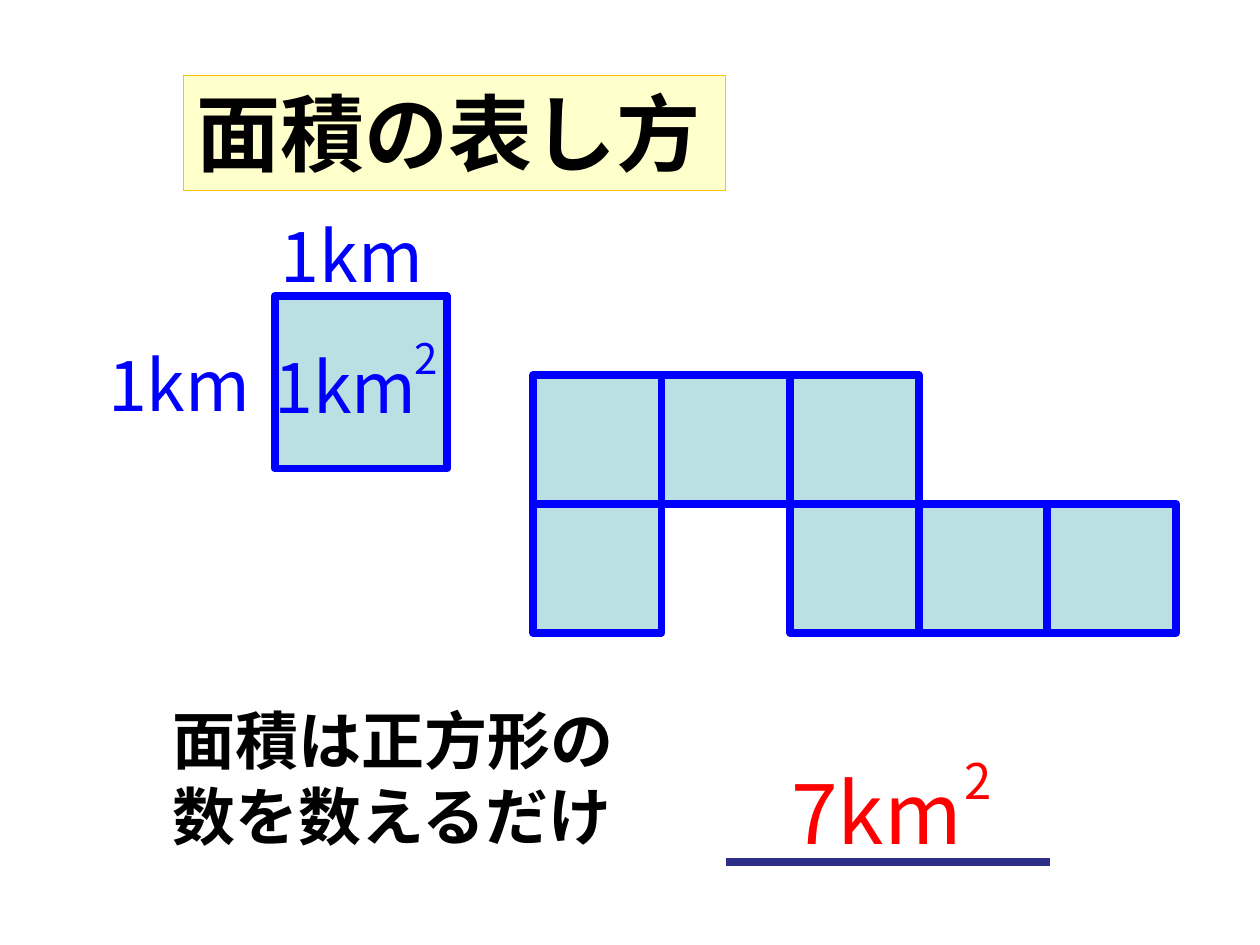
from lxml import etree
from pptx import Presentation
from pptx.dml.color import RGBColor
from pptx.enum import shapes, text
from pptx.oxml import ns
from pptx.util import Pt

FONT = "Noto Sans CJK JP"
HUES = {
    "tile": "BBE0E3",
    "blue": "0000FF",
    "red": "FF0000",
    "ink": "000000",
    "cream": "FFFFCC",
    "gold": "FFC000",
    "navy": "2D2D8A",
}
SIDE = 73.5  # side of one counted square
GRID = (304.5, 214.5)
CELLS = [(0, 0), (1, 0), (2, 0), (0, 1), (2, 1), (3, 1), (4, 1)]


def hue(name):
    return RGBColor.from_string(HUES[name])


def write(shape, words, size, tint, bold=False):
    frame = shape.text_frame
    frame.word_wrap = True
    frame.vertical_anchor = text.MSO_ANCHOR.TOP
    frame.text = words
    para = frame.paragraphs[0]
    para.alignment = text.PP_ALIGN.LEFT
    font = para.runs[0].font
    font.name, font.size, font.bold = FONT, Pt(size), bold
    font.color.rgb = hue(tint)
    # East Asian letters take their own font entry
    east = etree.SubElement(font._element, ns.qn("a:ea"))
    east.set("typeface", FONT)


def label(slide, box, words, size, tint, bold=False):
    shape = slide.shapes.add_textbox(*map(Pt, box))
    write(shape, words, size, tint, bold)


def rect(slide, box, fill, edge, width):
    shape = slide.shapes.add_shape(shapes.MSO_SHAPE.RECTANGLE, *map(Pt, box))
    shape.shadow.inherit = False
    shape.fill.solid()
    shape.fill.fore_color.rgb = hue(fill)
    shape.line.color.rgb = hue(edge)
    shape.line.width = Pt(width)
    return shape


def tile(slide, left, top, side):
    rect(slide, (left, top, side, side), "tile", "blue", 4.5)


def rule(slide, left, right, top):
    line = slide.shapes.add_connector(
        shapes.MSO_CONNECTOR.STRAIGHT, Pt(left), Pt(top), Pt(right), Pt(top))
    line.line.color.rgb = hue("navy")
    line.line.width = Pt(4.5)
    etree.SubElement(line._element.spPr, ns.qn("a:effectLst"))


def main():
    deck = Presentation()
    deck.slide_width, deck.slide_height = Pt(720), Pt(540)
    slide = deck.slides.add_slide(deck.slide_layouts[6])

    # Title
    title = rect(slide, (105, 43.2, 309.6, 65.5), "cream", "gold", 0.75)
    write(title, "面積の表し方", 48, "ink", True)

    # Unit square with its sides and area
    tile(slide, 157, 169.2, 98.6)
    label(slide, (54.7, 191.5, 106.6, 55.4), "1km", 40, "blue")
    label(slide, (153.4, 118.1, 106.6, 55.4), "1km", 40, "blue")
    label(slide, (149.8, 193, 108.7, 55.4), "1km", 40, "blue")
    label(slide, (229.7, 186.5, 42.5, 36), "2", 24, "blue")

    # Squares to count
    for col, row in CELLS:
        tile(slide, GRID[0] + col * SIDE, GRID[1] + row * SIDE, SIDE)

    # Rule in words and the answer
    label(slide, (91.4, 397.4, 276.5, 94.3),
          "面積は正方形の数を数えるだけ", 36, "ink", True)
    label(slide, (445, 431.3, 141.8, 65.5), "7km", 48, "red")
    label(slide, (544.3, 425.5, 42.5, 41), "2", 28, "red")
    rule(slide, 414.7, 599.8, 492.5)

    deck.save("out.pptx")


if __name__ == "__main__":
    main()
